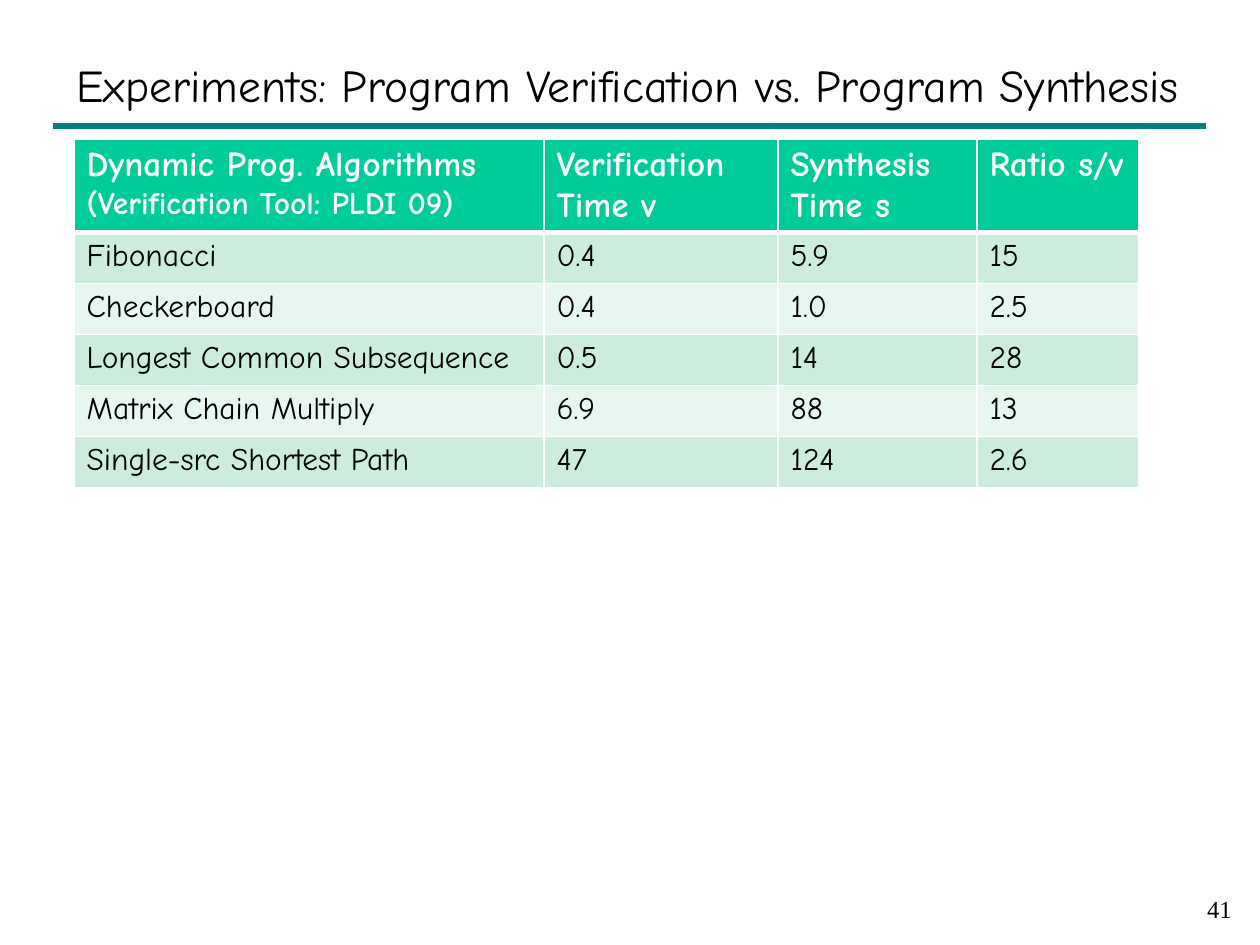
from typing import NamedTuple

from lxml.etree import SubElement
from pptx import Presentation
from pptx.dml.color import RGBColor
from pptx.enum.shapes import MSO_CONNECTOR
from pptx.enum.text import MSO_ANCHOR, PP_ALIGN
from pptx.oxml.ns import qn
from pptx.util import Emu, Pt

PX_PER_INCH = 126
TITLE_FONT = "Comic Neue"
NUMBER_FONT = "Times New Roman"
BLACK, WHITE, TEAL = "000000", "FFFFFF", "008080"
HEADER_FILL = "00CC99"
BAND_FILLS = ("CCECDE", "E7F6EF")

TABLE_LEFT, TABLE_TOP = 74, 139
COLUMN_WIDTHS = (470, 234, 199, 162)
HEADER_HEIGHT, ROW_HEIGHT = 92, 51


class Style(NamedTuple):
    size: int
    font: str = TITLE_FONT
    color: str = BLACK
    bold: bool = False
    align: PP_ALIGN = PP_ALIGN.LEFT


class Label(NamedTuple):
    text: str
    left: int
    top: int
    width: int
    height: int
    style: Style
    anchor: MSO_ANCHOR


HEADER = Style(20, color=WHITE, bold=True)
HEADER_NOTE = HEADER._replace(size=18)
BODY = Style(18)

HEADERS = (
    (("Dynamic Prog. Algorithms", HEADER), ("(Verification Tool: PLDI 09)", HEADER_NOTE)),
    (("Verification", HEADER), ("Time v", HEADER)),
    (("Synthesis", HEADER), ("Time s", HEADER)),
    (("Ratio s/v", HEADER),),
)
RESULTS = (
    ("Fibonacci", "0.4", "5.9", "15"),
    ("Checkerboard", "0.4", "1.0", "2.5"),
    ("Longest Common Subsequence", "0.5", "14", "28"),
    ("Matrix Chain Multiply", "6.9", "88", "13"),
    ("Single-src Shortest Path", "47", "124", "2.6"),
)
LABELS = (
    Label("41", 982, 888, 262, 53,
          Style(14, NUMBER_FONT, align=PP_ALIGN.RIGHT), MSO_ANCHOR.TOP),
    Label("Experiments: Program Verification vs. Program Synthesis", 6, 42, 1245, 84,
          Style(26, align=PP_ALIGN.CENTER), MSO_ANCHOR.MIDDLE),
)


def px(length: int) -> Emu:
    return Emu(round(length * 914400 / PX_PER_INCH))


def rgb(color: str) -> RGBColor:
    return RGBColor.from_string(color)


def write_lines(text_frame, lines) -> None:
    """Write (text, style) pairs as one paragraph each."""
    for index, (text, style) in enumerate(lines):
        paragraph = text_frame.add_paragraph() if index else text_frame.paragraphs[0]
        paragraph.text = text
        paragraph.alignment = style.align
        font = paragraph.font
        font.name, font.size, font.bold = style.font, Pt(style.size), style.bold
        font.color.rgb = rgb(style.color)


def add_label(slide, label: Label) -> None:
    box = slide.shapes.add_textbox(
        px(label.left), px(label.top), px(label.width), px(label.height))
    box.text_frame.word_wrap = True
    box.text_frame.vertical_anchor = label.anchor
    write_lines(box.text_frame, [(label.text, label.style)])


def add_title_rule(slide) -> None:
    rule = slide.shapes.add_connector(
        MSO_CONNECTOR.STRAIGHT, px(53), px(126), px(1206), px(126))
    rule.line.color.rgb = rgb(TEAL)
    rule.line.width = Pt(4)
    SubElement(rule._element.spPr, qn("a:effectLst"))


def set_borders(cell, top: int, bottom: int) -> None:
    """Draw white borders; top and bottom widths are in points."""
    properties = cell._tc.get_or_add_tcPr()
    for side, width in (("L", 1), ("R", 1), ("T", top), ("B", bottom)):
        line = SubElement(properties, qn(f"a:ln{side}"), w=str(Pt(width)))
        fill = SubElement(line, qn("a:solidFill"))
        SubElement(fill, qn("a:srgbClr"), val=WHITE)


def add_results_table(slide) -> None:
    rows = [HEADERS] + [[((text, BODY),) for text in result] for result in RESULTS]
    heights = [HEADER_HEIGHT] + [ROW_HEIGHT] * len(RESULTS)
    table = slide.shapes.add_table(
        len(rows), len(COLUMN_WIDTHS), px(TABLE_LEFT), px(TABLE_TOP),
        px(sum(COLUMN_WIDTHS)), px(sum(heights))).table
    for column, width in zip(table.columns, COLUMN_WIDTHS):
        column.width = px(width)
    for row_index, (row, height) in enumerate(zip(rows, heights)):
        table.rows[row_index].height = px(height)
        color = BAND_FILLS[(row_index - 1) % 2] if row_index else HEADER_FILL
        for column_index, lines in enumerate(row):
            cell = table.cell(row_index, column_index)
            set_borders(cell, top=3 if row_index == 1 else 1,
                        bottom=3 if row_index == 0 else 1)
            cell.fill.solid()
            cell.fill.fore_color.rgb = rgb(color)
            write_lines(cell.text_frame, lines)


def main() -> None:
    presentation = Presentation()
    presentation.slide_width, presentation.slide_height = px(1260), px(945)
    slide = presentation.slides.add_slide(presentation.slide_layouts[6])
    add_title_rule(slide)
    add_results_table(slide)
    for label in LABELS:
        add_label(slide, label)
    presentation.save("out.pptx")


if __name__ == "__main__":
    main()
